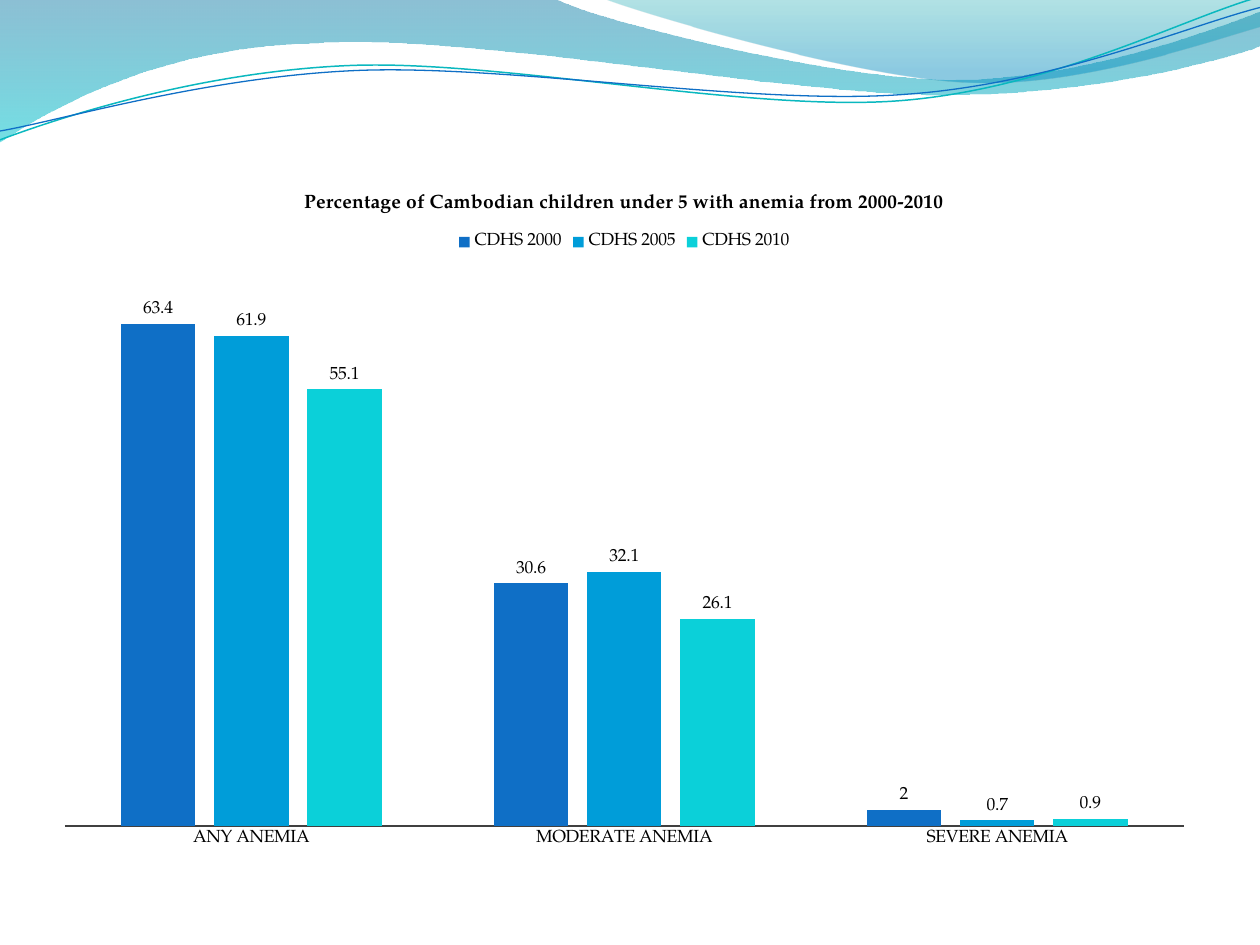
from dataclasses import dataclass
from math import cos, radians, sin

from lxml.etree import SubElement
from pptx import Presentation
from pptx.chart.chart import Chart
from pptx.chart.data import CategoryChartData
from pptx.dml.color import RGBColor
from pptx.enum.chart import XL_CHART_TYPE, XL_LABEL_POSITION, XL_LEGEND_POSITION, XL_TICK_LABEL_POSITION, XL_TICK_MARK
from pptx.oxml import parse_xml
from pptx.oxml.ns import nsdecls, qn
from pptx.shapes.autoshape import Shape
from pptx.shapes.shapetree import GroupShapes, SlideShapes
from pptx.slide import Slide
from pptx.util import Inches, Pt

COLUMN = Inches(1)
ROW = Inches(1)
COLUMNS, ROWS = 10, 7.5
FONT = "TeX Gyre Pagella"
COLORS = {
    "text": "000000",
    "axis": "404040",
    "deep blue": "0074A1",
    "aqua": "00C6CF",
    "teal": "00A1A9",
    "sea blue": "008BBF",
    "teal line": "0AB8BF",
    "blue": "0F6FC6",
    "sky": "009DD9",
    "cyan": "0BD0D9",
}

Point = tuple[float, float]


@dataclass(frozen=True)
class Stop:
    position: float
    color: str
    opacity: int


@dataclass(frozen=True)
class Wave:
    start: Point
    segments: tuple[tuple[Point, ...], ...]
    stops: tuple[Stop, ...] = ()
    line: str = ""
    weight: float = 0
    rotation: float = 0
    center: Point = (0, 0)


@dataclass(frozen=True)
class Survey:
    name: str
    values: tuple[float, ...]
    color: str


BANDS = (
    Wave(
        (0, 0),
        (
            ((4.4, -0.01),),
            ((4.76, 0.17), (6.64, 0.63), (7.58, 0.63)),
            ((8.53, 0.63), (9.58, 0.26), (10, 0.09)),
            ((10.01, 0.36),),
            ((9.83, 0.44), (8.7, 0.76), (7.46, 0.75)),
            ((6.22, 0.75), (3.82, 0.28), (2.57, 0.34)),
            ((1.29, 0.36), (0.46, 0.83), (-0.01, 1.13)),
            ((0, 0),),
        ),
        stops=(Stop(0, "deep blue", 45), Stop(1, "aqua", 55)),
    ),
    Wave(
        (4.79, -0.01),
        (
            ((5.09, 0.11), (6.82, 0.62), (7.69, 0.65)),
            ((8.56, 0.69), (9.61, 0.32), (10, 0.21)),
            ((10, 0),),
            ((4.79, -0.01),),
        ),
        stops=(Stop(0, "teal", 30), Stop(0.8, "sea blue", 45)),
    ),
)
STRANDS = (
    Wave(
        (0, 1.11),
        (
            ((0.48, 0.93), (1.58, 0.57), (2.77, 0.52)),
            ((3.95, 0.47), (5.93, 0.89), (7.13, 0.8)),
            ((8.33, 0.71), (9.38, 0.15), (9.98, -0.02)),
        ),
        line="teal line",
        weight=0.85,
        rotation=-2.7,
        center=(4.99, 0.58),
    ),
    Wave(
        (0, 1.04),
        (
            ((0.47, 0.96), (1.64, 0.61), (2.83, 0.56)),
            ((4.03, 0.51), (5.97, 0.84), (7.17, 0.75)),
            ((8.36, 0.67), (9.41, 0.21), (10, 0.06)),
        ),
        line="blue",
        weight=0.75,
        rotation=-2.7,
        center=(5, 0.59),
    ),
)

TITLE = "Percentage of Cambodian children under 5 with anemia from 2000-2010"
CATEGORIES = ("ANY ANEMIA", "MODERATE ANEMIA", "SEVERE ANEMIA")
SURVEYS = (
    Survey("CDHS 2000", (63.4, 30.6, 2), "blue"),
    Survey("CDHS 2005", (61.9, 32.1, 0.7), "sky"),
    Survey("CDHS 2010", (55.1, 26.1, 0.9), "cyan"),
)
PLOT_SHARES = {"x": 0.02, "y": 0.15, "w": 0.96, "h": 0.8}


def color_of(name: str) -> RGBColor:
    return RGBColor.from_string(COLORS[name])


def level(point: Point, wave: Wave) -> tuple[int, int]:
    angle = radians(-wave.rotation)
    x, y = point[0] - wave.center[0], point[1] - wave.center[1]
    return (
        round((wave.center[0] + x * cos(angle) - y * sin(angle)) * COLUMN),
        round((wave.center[1] + x * sin(angle) + y * cos(angle)) * ROW),
    )


def bend(shape: Shape, wave: Wave) -> None:
    lines = iter(list(shape.element.spPr.iter(qn("a:lnTo"))))
    for segment in wave.segments:
        first, *others = [next(lines) for _ in segment]
        if others:
            first.tag = qn("a:cubicBezTo")
        for line in others:
            first.append(line[0])
            line.getparent().remove(line)


def fill_gradient(shape: Shape, stops: tuple[Stop, ...]) -> None:
    shape.fill.gradient()
    shape.fill.gradient_angle = 270
    for target, stop in zip(shape.fill.gradient_stops, stops):
        target.position = stop.position
        target.color.rgb = color_of(stop.color)
    for color, stop in zip(shape.element.spPr.iter(qn("a:srgbClr")), stops):
        SubElement(color, qn("a:alpha"), val=str(stop.opacity * 1000))


def draw_wave(shapes: SlideShapes | GroupShapes, wave: Wave) -> None:
    builder = shapes.build_freeform(*level(wave.start, wave))
    points = [level(point, wave) for segment in wave.segments for point in segment]
    builder.add_line_segments(points, close=bool(wave.stops))
    shape = builder.convert_to_shape()
    bend(shape, wave)
    shape.rotation = wave.rotation
    shape.shadow.inherit = False
    if wave.stops:
        fill_gradient(shape, wave.stops)
        shape.line.fill.background()
    else:
        shape.fill.background()
        shape.line.color.rgb = color_of(wave.line)
        shape.line.width = Pt(wave.weight)


def place_plot(chart: Chart) -> None:
    modes = '<c:layoutTarget val="inner"/><c:xMode val="edge"/><c:yMode val="edge"/>'
    shares = "".join(f'<c:{side} val="{share}"/>' for side, share in PLOT_SHARES.items())
    area = chart.element.find(".//" + qn("c:plotArea"))
    for layout in area.findall(qn("c:layout")):
        area.remove(layout)
    area.insert(0, parse_xml(f'<c:layout {nsdecls("c")}><c:manualLayout>{modes}{shares}</c:manualLayout></c:layout>'))


def draw_chart(page: Slide) -> None:
    data = CategoryChartData()
    data.categories = CATEGORIES
    for survey in SURVEYS:
        data.add_series(survey.name, survey.values)
    chart = page.shapes.add_chart(
        XL_CHART_TYPE.COLUMN_CLUSTERED,
        round(0.33 * COLUMN), round(1.33 * ROW), round(9.25 * COLUMN), round(5.5 * ROW), data,
    ).chart
    chart.font.name = FONT
    chart.font.size = Pt(10)
    chart.font.color.rgb = color_of("text")

    chart.has_title = True
    para = chart.chart_title.text_frame.paragraphs[0]
    para.text = TITLE
    para.font.name = FONT
    para.font.size = Pt(11)
    para.font.bold = True
    para.font.color.rgb = color_of("text")
    chart.has_legend = True
    chart.legend.position = XL_LEGEND_POSITION.TOP
    chart.legend.include_in_layout = False

    axis = chart.category_axis
    axis.major_tick_mark = XL_TICK_MARK.NONE
    axis.minor_tick_mark = XL_TICK_MARK.NONE
    axis.tick_label_position = XL_TICK_LABEL_POSITION.NEXT_TO_AXIS
    axis.format.line.color.rgb = color_of("axis")
    axis.format.line.width = Pt(1)
    chart.value_axis.visible = False
    chart.value_axis.has_major_gridlines = False
    chart.value_axis.minimum_scale = 0
    chart.value_axis.maximum_scale = 70

    plot = chart.plots[0]
    plot.vary_by_categories = False
    plot.gap_width = 150
    plot.overlap = -25
    for series, survey in zip(plot.series, SURVEYS):
        series.format.fill.solid()
        series.format.fill.fore_color.rgb = color_of(survey.color)
        series.data_labels.show_value = True
        series.data_labels.position = XL_LABEL_POSITION.OUTSIDE_END
    place_plot(chart)


def main() -> None:
    deck = Presentation()
    deck.slide_width = COLUMNS * COLUMN
    deck.slide_height = round(ROWS * ROW)
    page = deck.slides.add_slide(deck.slide_layouts[6])
    for band in BANDS:
        draw_wave(page.shapes, band)
    strands = page.shapes.add_group_shape()
    for strand in STRANDS:
        draw_wave(strands.shapes, strand)
    draw_chart(page)
    deck.save("out.pptx")


if __name__ == "__main__":
    main()
